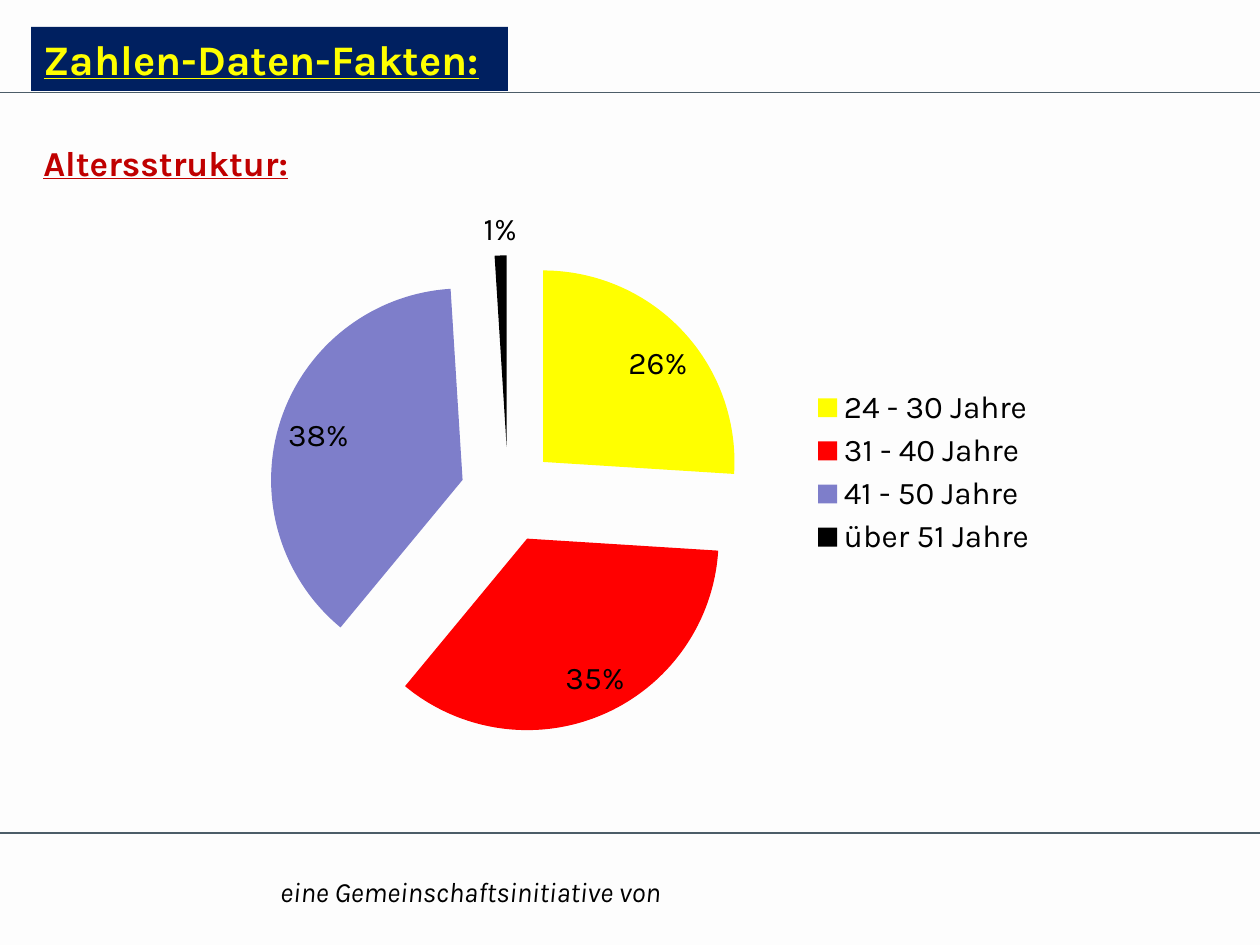
from lxml.etree import SubElement
from pptx import Presentation
from pptx.chart.data import CategoryChartData
from pptx.dml.color import RGBColor
from pptx.enum.chart import XL_CHART_TYPE as ChartType
from pptx.enum.chart import XL_LABEL_POSITION as LabelPosition
from pptx.enum.chart import XL_LEGEND_POSITION as LegendPosition
from pptx.enum.shapes import MSO_CONNECTOR as Connector
from pptx.enum.text import MSO_ANCHOR as Anchor
from pptx.enum.text import PP_ALIGN as Align
from pptx.oxml import parse_xml
from pptx.oxml.ns import nsdecls, qn
from pptx.util import Pt

PX = 914400 // 126
WIDTH, HEIGHT = 1260, 945
FONT = "Karla"

BACKGROUND = RGBColor(0xFD, 0xFD, 0xFD)
NAVY = RGBColor(0x00, 0x20, 0x60)
YELLOW = RGBColor(0xFF, 0xFF, 0x00)
DARK_RED = RGBColor(0xC0, 0x00, 0x00)
RED = RGBColor(0xFF, 0x00, 0x00)
BLUE = RGBColor(0x00, 0x00, 0x99)
BLACK = RGBColor(0x00, 0x00, 0x00)
RULE_GREY = RGBColor(0x4C, 0x5D, 0x68)

TITLE = ("Zahlen-Daten-Fakten:", (31, 27, 477, 64))
SUBTITLE = ("Altersstruktur:", (31, 135, 1137, 55))
FOOTER = ("eine Gemeinschaftsinitiative von", (239, 868, 463, 47))
RULES = [(92, 0.5), (833, 0.75)]
CHART_BOX = (210, 193, 840, 559)
PIE_BOX = (269, 254, 480, 480)
AGE_GROUPS = [
    ("24 - 30 Jahre", 0.26, YELLOW, 100),
    ("31 - 40 Jahre", 0.35, RED, 100),
    ("41 - 50 Jahre", 0.38, BLUE, 50),
    ("über 51 Jahre", 0.01, BLACK, 100),
]


def emu(lengths):
    return [length * PX for length in lengths]


def style(font, size, color, **flags):
    font.name = FONT
    font.size = Pt(size)
    font.color.rgb = color
    for flag, value in flags.items():
        setattr(font, flag, value)


def write(shape, text, size, color, align=Align.LEFT, **flags):
    frame = shape.text_frame
    frame.word_wrap = True
    frame.vertical_anchor = Anchor.MIDDLE
    para = frame.paragraphs[0]
    para.text = text
    para.alignment = align
    style(para.font, size, color, **flags)


def add_rule(slide, y, weight):
    rule = slide.shapes.add_connector(Connector.STRAIGHT, *emu((WIDTH, y, 0, y)))
    rule.line.color.rgb = RULE_GREY
    rule.line.width = Pt(weight)
    SubElement(rule._element.spPr, qn("a:effectLst"))


def place_plot(chart):
    left, top, width, height = CHART_BOX
    pie_left, pie_top, pie_width, pie_height = PIE_BOX
    shares = {
        "x": (pie_left - left) / width,
        "y": (pie_top - top) / height,
        "w": pie_width / width,
        "h": pie_height / height,
    }
    modes = "".join(f'<c:{key}Mode val="edge"/>' for key in "xy")
    sizes = "".join(f'<c:{key} val="{share:.2f}"/>' for key, share in shares.items())
    layout = parse_xml(
        f'<c:layout {nsdecls("c")}><c:manualLayout><c:layoutTarget val="inner"/>'
        f"{modes}{sizes}</c:manualLayout></c:layout>"
    )
    plot_area = chart._chartSpace.chart.plotArea
    for old in plot_area.findall(qn("c:layout")):
        plot_area.remove(old)
    plot_area.insert(0, layout)


def add_pie(slide):
    data = CategoryChartData(number_format="0%")
    data.categories = [name for name, *_ in AGE_GROUPS]
    data.add_series("Series 1", [share for _, share, *_ in AGE_GROUPS])
    chart = slide.shapes.add_chart(ChartType.PIE_EXPLODED, *emu(CHART_BOX), data).chart
    style(chart.font, 18, BLACK)
    chart.has_title = False
    chart.has_legend = True
    chart.legend.position = LegendPosition.RIGHT
    chart.legend.include_in_layout = False
    place_plot(chart)

    plot = chart.plots[0]
    plot.vary_by_categories = True
    plot.has_data_labels = True
    labels = plot.data_labels
    labels.show_value = True
    labels.show_percentage = False
    labels.number_format = "0%"
    labels.number_format_is_linked = False
    labels.position = LabelPosition.BEST_FIT
    style(labels.font, 18, BLACK)

    series = plot.series[0]
    for explosion in series._element.findall(qn("c:explosion")):
        explosion.set("val", "25")
    for index, (_, _, color, opacity) in enumerate(AGE_GROUPS):
        fill = series.points[index].format.fill
        fill.solid()
        fill.fore_color.rgb = color
        if opacity < 100:
            tint = fill._xPr.find(qn("a:solidFill"))[0]
            SubElement(tint, qn("a:alpha")).set("val", str(opacity * 1000))


def main():
    deck = Presentation()
    deck.slide_width, deck.slide_height = emu((WIDTH, HEIGHT))
    slide = deck.slides.add_slide(deck.slide_layouts[5])
    slide.background.fill.solid()
    slide.background.fill.fore_color.rgb = BACKGROUND

    for y, weight in RULES:
        add_rule(slide, y, weight)

    text, place = FOOTER
    footer = slide.shapes.add_textbox(*emu(place))
    write(footer, text, 16, BLACK, Align.CENTER, italic=True)

    text, place = SUBTITLE
    subtitle = slide.shapes.add_textbox(*emu(place))
    write(subtitle, text, 20, DARK_RED, bold=True, underline=True)

    title = slide.shapes.title
    text, place = TITLE
    title.left, title.top, title.width, title.height = emu(place)
    title.fill.solid()
    title.fill.fore_color.rgb = NAVY
    write(title, text, 24, YELLOW, bold=True, underline=True)
    tree = slide.shapes._spTree
    tree.remove(title._element)
    tree.append(title._element)

    add_pie(slide)
    deck.save("out.pptx")


if __name__ == "__main__":
    main()
